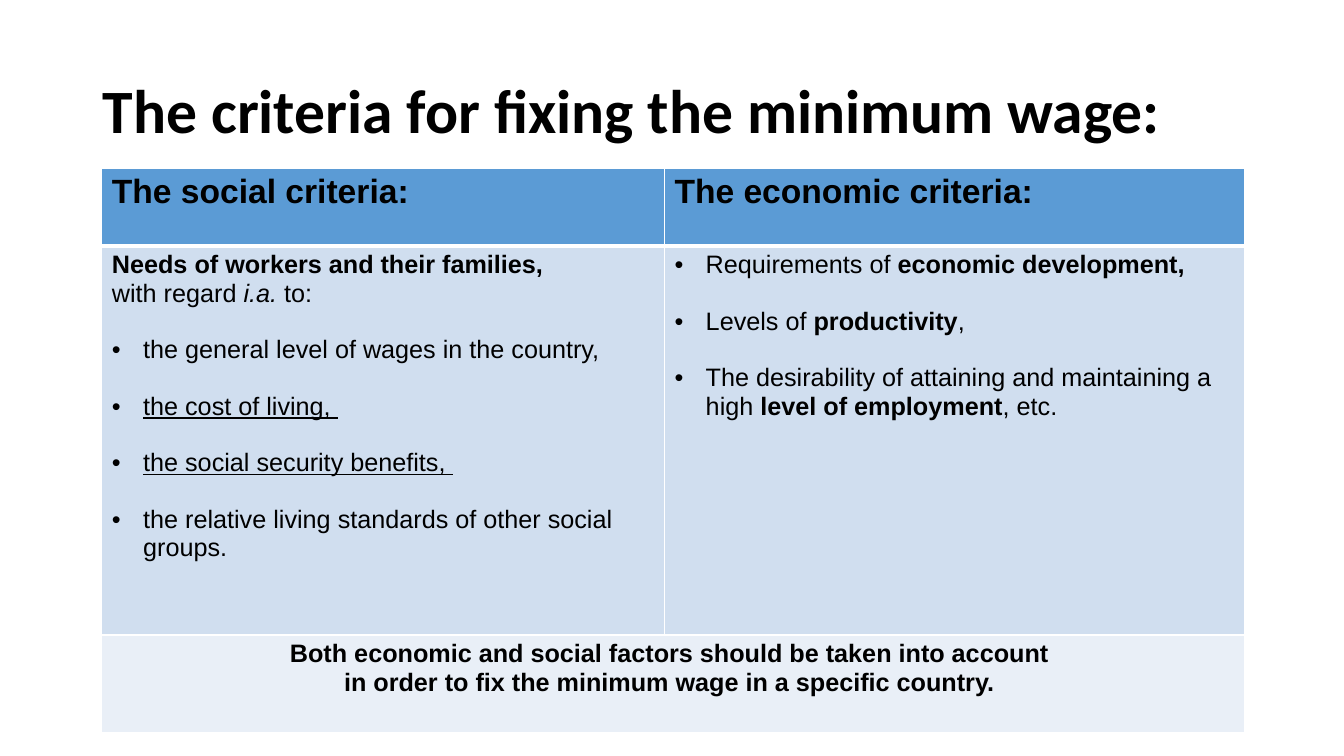
"""Builds the slide on the criteria for fixing the minimum wage."""
from lxml import etree
from pptx import Presentation, oxml, util as u
from pptx.dml import color
from pptx.enum import text
from pptx.oxml import ns

PX = 9144
BLACK, WHITE = "000000", "FFFFFF"
HEADER, BODY, CONCLUSION = "5B9BD5", "D0DEEF", "E9EFF7"
COLUMNS, ROWS = (558, 575), (77, 386, 97)
HEADINGS = ("The social criteria:", "The economic criteria:")
NEEDS = (
    [("Needs of workers and their families,", "b")],
    [("with regard ", ""), ("i.a.", "i"), (" to:", "")],
)
SOCIAL = (
    [("the general level of wages in the country,", "")],
    [("the cost of living, ", "u")],
    [("the social security benefits, ", "u")],
    [("the relative living standards of other social groups.", "")],
)
ECONOMIC = (
    [("Requirements of ", ""), ("economic development,", "b")],
    [("Levels of ", ""), ("productivity", "b"), (",", "")],
    [("The desirability of attaining and maintaining a high ", ""),
     ("level of employment", "b"), (", etc.", "")],
)
SUMMARY = (
    [("Both economic and social factors should be taken into account ", "b")],
    [("in order to fix the minimum wage in a specific country. ", "b")],
)


def px(length):
    """Turn px into EMU."""
    return u.Emu(length * PX)


def rgb(value):
    """Turn a hex string into a colour."""
    return color.RGBColor.from_string(value)


def add_run(paragraph, wording, style, size, face="Arial"):
    """Add one run; style holds any of the letters b, i and u."""
    run = paragraph.add_run()
    run.text = wording
    font = run.font
    font.name, font.size = face, u.Pt(size)
    font.bold, font.italic, font.underline = (key in style for key in "biu")
    font.color.rgb = rgb(BLACK)


def add_paragraph(frame, runs, size=18, align=text.PP_ALIGN.LEFT):
    """Add a paragraph, filling the first one while it is empty."""
    first = frame.paragraphs[0]
    paragraph = frame.add_paragraph() if first.runs else first
    paragraph.alignment = align
    for wording, style in runs:
        add_run(paragraph, wording, style, size)
    return paragraph


def add_bullets(frame, items):
    """Add bulleted items, one blank line's height apart."""
    for item in items:
        spaced = bool(frame.paragraphs[0].runs)
        paragraph = add_paragraph(frame, item)
        paragraph.space_before = u.Pt(20.2 if spaced else 0)
        properties = paragraph._p.get_or_add_pPr()
        properties.set("marL", str(px(31)))
        properties.set("indent", str(-px(31)))
        colour = etree.SubElement(properties, ns.qn("a:buClr"))
        etree.SubElement(colour, ns.qn("a:srgbClr"), val=BLACK)
        etree.SubElement(properties, ns.qn("a:buFont"), typeface="Arial")
        etree.SubElement(properties, ns.qn("a:buChar"), char="•")


def format_cell(cell, fill, top, bottom):
    """Fill a cell and draw its white borders, with widths in points."""
    cell.fill.solid()
    cell.fill.fore_color.rgb = rgb(fill)
    properties = cell._tc.get_or_add_tcPr()
    for place, (side, width) in enumerate(zip("LRTB", (1, 1, top, bottom))):
        border = oxml.parse_xml(
            f'<a:ln{side} {ns.nsdecls("a")} w="{u.Pt(width)}"><a:solidFill>'
            f'<a:srgbClr val="{WHITE}"/></a:solidFill></a:ln{side}>')
        properties.insert(place, border)


def add_title(slide, wording):
    """Place and fill the title."""
    title = slide.shapes.title
    title.left, title.top, title.width, title.height = map(px, (92, 40, 1150, 145))
    frame = title.text_frame
    frame.auto_size = text.MSO_AUTO_SIZE.NONE
    frame.vertical_anchor = text.MSO_ANCHOR.MIDDLE
    paragraph = frame.paragraphs[0]
    paragraph.alignment, paragraph.line_spacing = text.PP_ALIGN.LEFT, 0.9
    add_run(paragraph, wording, "b", 44, "Calibri")


def add_criteria(slide):
    """Add the table of social and economic criteria."""
    area = map(px, (101, 167, sum(COLUMNS), sum(ROWS)))
    criteria = slide.shapes.add_table(len(ROWS), len(COLUMNS), *area).table
    for column, width in zip(criteria.columns, COLUMNS):
        column.width = px(width)
    looks = ((HEADER, 1, 3), (BODY, 3, 1), (CONCLUSION, 1, 1))
    for row, height, look in zip(criteria.rows, ROWS, looks):
        row.height = px(height)
        for cell in row.cells:
            format_cell(cell, *look)
    for index, heading in enumerate(HEADINGS):
        add_paragraph(criteria.cell(0, index).text_frame, [(heading, "b")], 24)
    social, economic = (criteria.cell(1, index).text_frame for index in (0, 1))
    for line in NEEDS:
        add_paragraph(social, line)
    add_bullets(social, SOCIAL)
    add_bullets(economic, ECONOMIC)
    summary = criteria.cell(2, 0)
    summary.merge(criteria.cell(2, 1))
    for line in SUMMARY:
        add_paragraph(summary.text_frame, line, align=text.PP_ALIGN.CENTER)


def main():
    """Build and save the slide."""
    deck = Presentation()
    deck.slide_width, deck.slide_height = px(1333), px(750)
    slide = deck.slides.add_slide(deck.slide_layouts[5])
    add_title(slide, "The criteria for fixing the minimum wage:")
    add_criteria(slide)
    deck.save("out.pptx")


if __name__ == "__main__":
    main()
